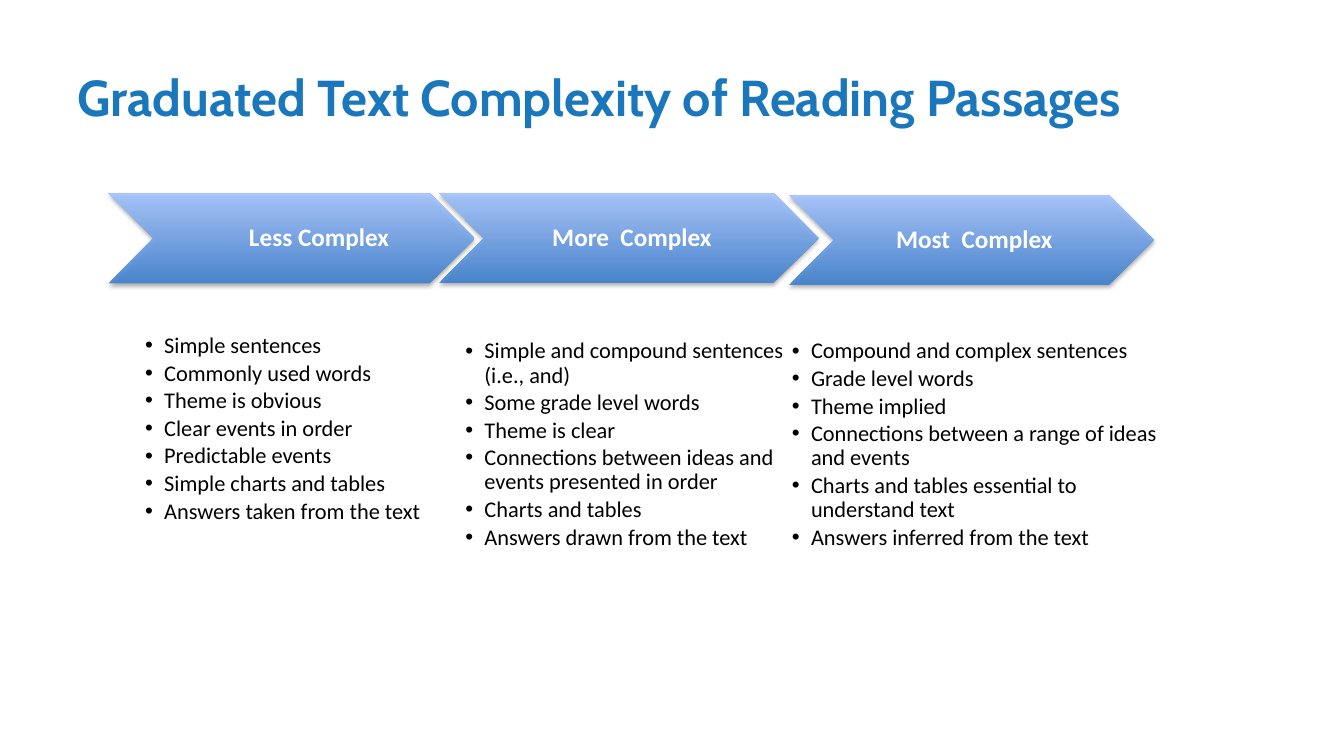
from dataclasses import dataclass

from lxml import etree
from pptx import Presentation
from pptx import util as u
from pptx.dml.color import RGBColor
from pptx.enum import shapes, text
from pptx.oxml import parse_xml
from pptx.oxml.ns import nsdecls, qn

TITLE = "Graduated Text Complexity of Reading Passages"

# Boxes are left, top, width, height in centimetres.
STAGES = [
    {
        "name": "Less Complex",
        "arrow": (2.74, 4.88, 9.22, 2.26),
        "label": (4.32, 4.88, 7.32, 2.26),
        "list": (3.66, 8.43, 9.83, 4.57),
        "points": [
            "Simple sentences",
            "Commonly used words",
            "Theme is obvious",
            "Clear events in order",
            "Predictable events",
            "Simple charts and tables",
            "Answers taken from the text",
        ],
    },
    {
        "name": "More  Complex",
        "arrow": (11.07, 4.87, 9.55, 2.26),
        "label": (12.07, 4.87, 7.59, 2.26),
        "list": (11.73, 8.56, 8.05, 4.39),
        "points": [
            "Simple and compound sentences (i.e., and)",
            "Some grade level words",
            "Theme is clear",
            "Connections between ideas and events presented in order",
            "Charts and tables",
            "Answers drawn from the text",
        ],
    },
    {
        "name": "Most  Complex",
        "arrow": (19.89, 4.92, 9.19, 2.26),
        "label": (20.85, 4.92, 7.29, 2.26),
        "list": (19.96, 8.56, 9.37, 3.96),
        "points": [
            "Compound and complex sentences",
            "Grade level words",
            "Theme implied",
            "Connections between a range of ideas and events",
            "Charts and tables essential to understand text",
            "Answers inferred from the text",
        ],
    },
]


@dataclass(frozen=True)
class Theme:
    head: str = "1B77BC"
    ink: str = "000000"
    pale: str = "FFFFFF"
    fade: tuple = ("3F80CE", "A4C4FF")
    alpha: int = 90
    title: int = 36
    label: int = 18
    body: int = 16
    display: str = "Cabin"
    plain: str = "Calibri"


T = Theme()
HEAD = {"name": T.display, "size": u.Pt(T.title), "bold": True}
LABEL = {"name": T.plain, "size": u.Pt(T.label), "bold": True}
BODY = {"name": T.plain, "size": u.Pt(T.body), "bold": False}
INDENT = u.Cm(0.48)
SHADOW = (
    f'<a:effectLst {nsdecls("a")}>'
    '<a:outerShdw blurRad="40000" dist="23000" dir="5400000" rotWithShape="0">'
    '<a:srgbClr val="000000"><a:alpha val="35000"/></a:srgbClr>'
    "</a:outerShdw></a:effectLst>"
)


def place(box):
    return [u.Cm(side) for side in box]


def assign(thing, values):
    for key, value in values.items():
        setattr(thing, key, value)


def write(para, words, font, color):
    run = para.add_run()
    run.text = words
    assign(run.font, font)
    run.font.color.rgb = RGBColor.from_string(color)


def add_box(slide, box, pads, anchor):
    """Add a wrapping text box; pads are left, top, right, bottom in cm."""
    frame = slide.shapes.add_textbox(*place(box)).text_frame
    sides = ("margin_left", "margin_top", "margin_right", "margin_bottom")
    assign(frame, dict(zip(sides, place(pads))))
    assign(frame, {"word_wrap": True, "vertical_anchor": anchor})
    return frame


def add_arrow(slide, box):
    arrow = slide.shapes.add_shape(shapes.MSO_SHAPE.CHEVRON, *place(box))
    arrow.line.fill.background()
    arrow.fill.gradient()
    arrow.fill.gradient_angle = 90
    for stop, color in zip(arrow.fill.gradient_stops, T.fade):
        stop.color.rgb = RGBColor.from_string(color)
    props = arrow.element.spPr
    for color in props.iter(qn("a:srgbClr")):
        etree.SubElement(color, qn("a:alpha"), val=str(T.alpha * 1000))
    props.append(parse_xml(SHADOW))


def add_label(slide, box, words):
    frame = add_box(slide, box, (0.2, 0.08, 0.08, 0.08), text.MSO_ANCHOR.MIDDLE)
    para = frame.paragraphs[0]
    assign(para, {"alignment": text.PP_ALIGN.CENTER, "line_spacing": 0.9})
    write(para, words, LABEL, T.pale)


def add_list(slide, box, points):
    frame = add_box(slide, box, (0, 0, 0, 0), text.MSO_ANCHOR.TOP)
    for num, point in enumerate(points):
        para = frame.add_paragraph() if num else frame.paragraphs[0]
        props = para._p.get_or_add_pPr()
        props.set("marL", str(INDENT))
        props.set("indent", str(-INDENT))
        etree.SubElement(props, qn("a:buFont"), typeface="Arial")
        etree.SubElement(props, qn("a:buChar"), char="•")
        assign(para, {"level": 1, "line_spacing": 0.9, "space_after": u.Pt(2.4)})
        write(para, point, BODY, T.ink)


def add_title(slide):
    title = slide.shapes.title
    sides = ("left", "top", "width", "height")
    assign(title, dict(zip(sides, place((1.7, 0.85, 30.48, 3.18)))))
    frame = title.text_frame
    assign(frame, {"word_wrap": True, "vertical_anchor": text.MSO_ANCHOR.MIDDLE})
    para = frame.paragraphs[0]
    para.alignment = text.PP_ALIGN.LEFT
    write(para, TITLE, HEAD, T.head)


def main():
    deck = Presentation()
    assign(deck, {"slide_width": u.Cm(33.87), "slide_height": u.Cm(19.05)})
    slide = deck.slides.add_slide(deck.slide_layouts.get_by_name("Title Only"))
    add_title(slide)
    for stage in STAGES:
        add_arrow(slide, stage["arrow"])
        add_label(slide, stage["label"], stage["name"])
        add_list(slide, stage["list"], stage["points"])
    deck.save("out.pptx")


if __name__ == "__main__":
    main()
